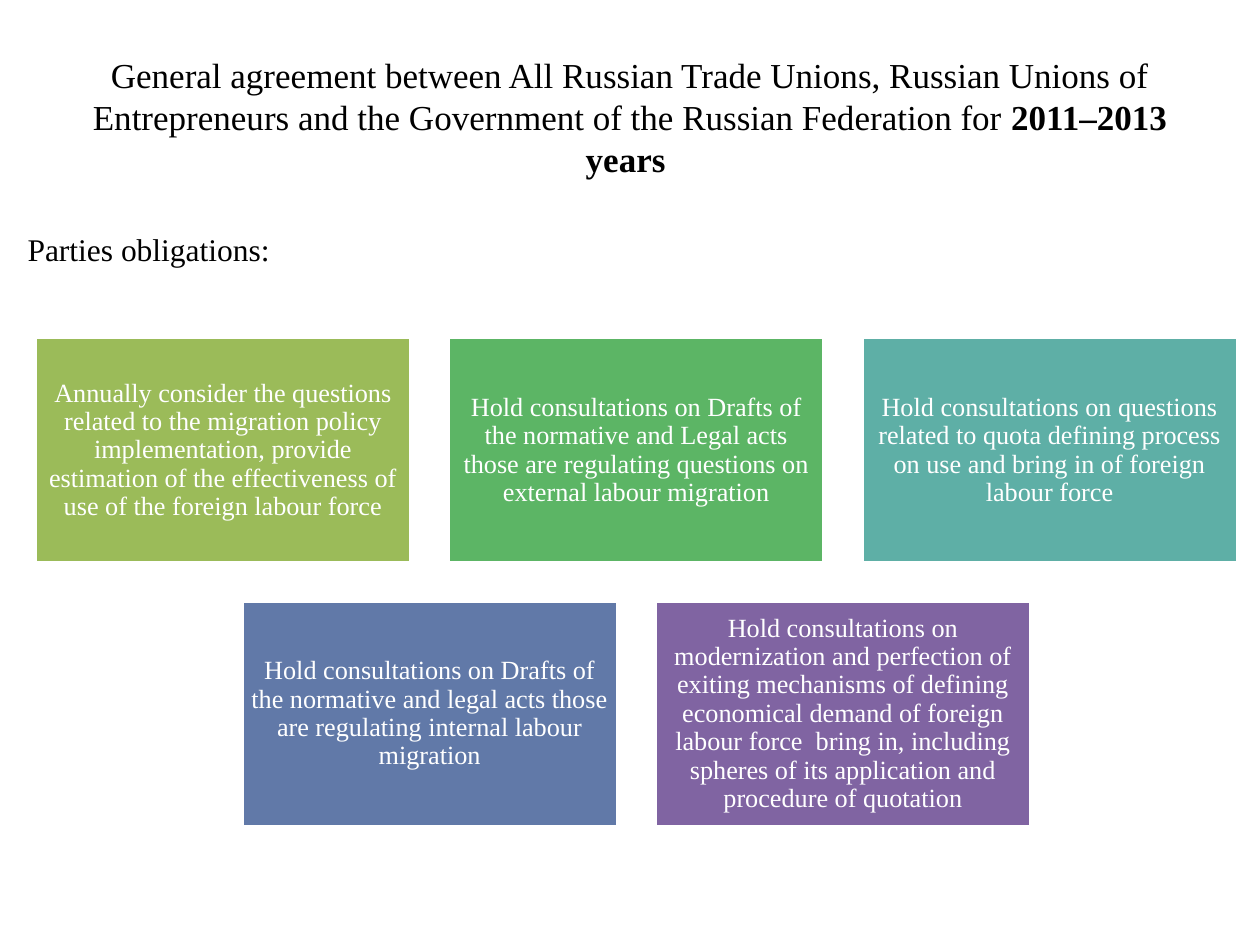
from pptx import Presentation
from pptx.dml.color import RGBColor
from pptx.enum.shapes import MSO_SHAPE
from pptx.enum.text import MSO_ANCHOR, MSO_AUTO_SIZE, PP_ALIGN
from pptx.util import Inches, Pt

RECT = MSO_SHAPE.RECTANGLE
MIDDLE = MSO_ANCHOR.MIDDLE
CENTER = PP_ALIGN.CENTER
NO_FIT = MSO_AUTO_SIZE.NONE
GROW = MSO_AUTO_SIZE.SHAPE_TO_FIT_TEXT

THEME = {
    "font": "Times New Roman",
    "ink": "000000", "paper": "FFFFFF",
    "title": 20, "lead": 18, "box": 15,
}

# Box grid in inches: rows of three columns, shorter rows centred
COLUMNS = 3
GRID_LEFT, GRID_TOP = 0.28, 2.68
BOX_W, BOX_H, GAP = 2.98, 1.79, 0.3
BOX_INSET = 0.06

OBLIGATION_ROWS = [
    [
        ("9BBB59", "Annually consider the questions related to the migration policy "
                   "implementation, provide estimation of the effectiveness of use of "
                   "the foreign labour force"),
        ("5CB565", "Hold consultations on Drafts of the normative and Legal acts those "
                   "are regulating questions on external labour migration"),
        ("5EAFA6", "Hold consultations on questions related to quota defining process "
                   "on use and bring in of foreign labour force"),
    ],
    [
        ("6179A8", "Hold consultations on Drafts of the normative and legal acts those "
                   "are regulating internal labour migration"),
        ("8064A2", "Hold consultations on modernization and perfection of exiting "
                   "mechanisms of defining economical demand of foreign labour force  "
                   "bring in, including spheres of its application and procedure of "
                   "quotation"),
    ],
]


def add_run(p, text, size, color, bold=False):
    r = p.add_run()
    r.text = text
    r.font.name = THEME["font"]
    r.font.size = Pt(THEME[size])
    r.font.bold = bold
    r.font.color.rgb = RGBColor.from_string(THEME[color])


prs = Presentation()
prs.slide_width, prs.slide_height = Inches(10), Inches(7.5)
s = prs.slides.add_slide(prs.slide_layouts[5])

# Title
title = s.shapes.title
title.left, title.top = Inches(0.5), Inches(0.3)
title.width, title.height = Inches(9), Inches(1.25)
tf = title.text_frame
tf.auto_size = NO_FIT
tf.vertical_anchor = MIDDLE
p = tf.paragraphs[0]
p.alignment = CENTER
add_run(p, "General agreement between All Russian Trade Unions, Russian Unions of "
           "Entrepreneurs and the Government of the Russian Federation for ",
        "title", "ink")
add_run(p, "2011–2013 years ", "title", "ink", bold=True)

# Obligation boxes
for row, boxes in enumerate(OBLIGATION_ROWS):
    indent = (COLUMNS - len(boxes)) / 2
    for col, (fill, text) in enumerate(boxes):
        left = GRID_LEFT + (col + indent) * (BOX_W + GAP)
        top = GRID_TOP + row * (BOX_H + GAP)
        sp = s.shapes.add_shape(RECT, Inches(left), Inches(top),
                                Inches(BOX_W), Inches(BOX_H))
        sp.shadow.inherit = False
        sp.fill.solid()
        sp.fill.fore_color.rgb = RGBColor.from_string(fill)
        sp.line.color.rgb = RGBColor.from_string(THEME["paper"])
        sp.line.width = Pt(2)
        tf = sp.text_frame
        tf.word_wrap = True
        tf.vertical_anchor = MIDDLE
        tf.margin_left = tf.margin_right = Inches(BOX_INSET)
        tf.margin_top = tf.margin_bottom = Inches(BOX_INSET)
        p = tf.paragraphs[0]
        p.alignment = CENTER
        p.line_spacing = 0.9
        add_run(p, text, "box", "paper")

# Lead-in line above the boxes
lead = s.shapes.add_textbox(Inches(0.12), Inches(1.78), Inches(5.72), Inches(0.4))
tf = lead.text_frame
tf.word_wrap = True
tf.auto_size = GROW
p = tf.paragraphs[0]
p.space_before = Pt(0.2 * THEME["lead"])
add_run(p, "Parties obligations:", "lead", "ink")

prs.save("out.pptx")
